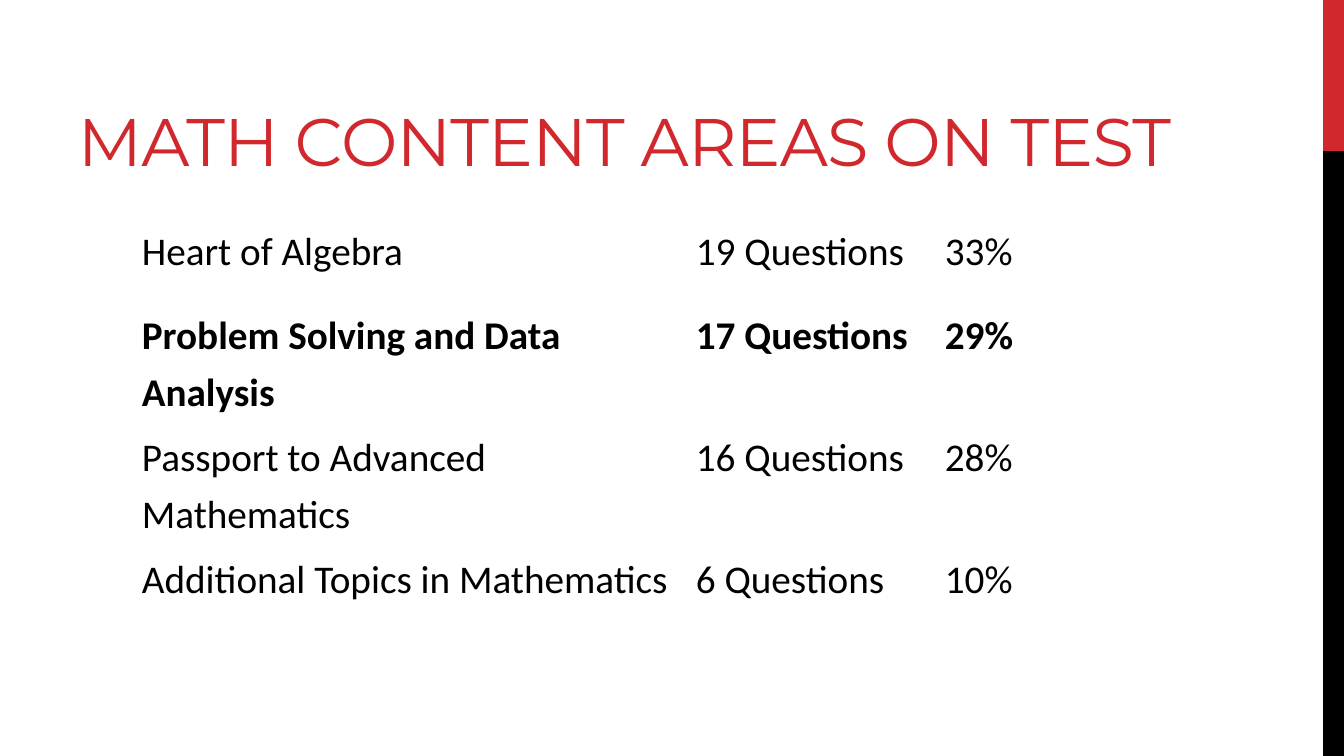
from pptx import Presentation
from pptx.dml.color import RGBColor
from pptx.enum.shapes import MSO_SHAPE as Shape
from pptx.enum.text import MSO_ANCHOR as Anchor
from pptx.util import Emu, Pt

EMU_PER_PX = 914400 / 100.8
RED, BLACK = "D1282E", "000000"
COLUMN_WIDTHS = [554, 249, 162]
ROW_HEIGHTS = [84, 122, 122, 84]
AREAS = [
    ("Heart of Algebra", "19 Questions", "33%"),
    ("Problem Solving and Data Analysis", "17 Questions", "29%"),
    ("Passport to Advanced Mathematics", "16 Questions", "28%"),
    ("Additional Topics in Mathematics", "6 Questions", "10%"),
]
HIGHLIGHTED_ROW = 1


def px(length):
    return Emu(round(length * EMU_PER_PX))


def color(value):
    return RGBColor.from_string(value)


def set_margins(target, left, top, right, bottom):
    target.margin_left, target.margin_top = px(left), px(top)
    target.margin_right, target.margin_bottom = px(right), px(bottom)


def write(frame, text, *, font, size, fill, bold=False,
          line_spacing=None, space_after=None, tracking=None):
    frame.word_wrap = True
    para = frame.paragraphs[0]
    para.line_spacing = line_spacing
    para.space_after = space_after
    span = para.add_run()
    span.text = text
    span.font.name = font
    span.font.size = Pt(size)
    span.font.bold = bold
    span.font.color.rgb = color(fill)
    if tracking is not None:
        span.font._element.set("spc", str(tracking))


def add_bar(page, left, top, width, height, fill):
    bar = page.shapes.add_shape(Shape.RECTANGLE, px(left), px(top), px(width), px(height))
    bar.shadow.inherit = False
    bar.fill.solid()
    bar.fill.fore_color.rgb = color(fill)
    bar.line.fill.background()


def add_title(page, text):
    box = page.shapes.add_textbox(px(68), px(17), px(1214), px(168))
    frame = box.text_frame
    frame.vertical_anchor = Anchor.BOTTOM
    set_margins(frame, 10, 5, 10, 5)
    write(frame, text, font="Montserrat", size=48, fill=RED, tracking=-60)


def add_area_table(page):
    holder = page.shapes.add_table(len(AREAS), len(COLUMN_WIDTHS), px(138), px(215),
                                   px(sum(COLUMN_WIDTHS)), px(sum(ROW_HEIGHTS)))
    table = holder.table
    table.first_row = table.horz_banding = False
    for column, width in zip(table.columns, COLUMN_WIDTHS):
        column.width = px(width)
    for index, (row, height) in enumerate(zip(table.rows, ROW_HEIGHTS)):
        row.height = px(height)
        for cell, text in zip(row.cells, AREAS[index]):
            cell.fill.background()
            set_margins(cell, 4, 4, 4, 4)
            write(cell.text_frame, text, font="Calibri", size=28, fill=BLACK,
                  bold=index == HIGHLIGHTED_ROW, line_spacing=1.19, space_after=Pt(6))


def main():
    deck = Presentation()
    deck.slide_width, deck.slide_height = px(1344), px(756)
    page = deck.slides.add_slide(deck.slide_layouts[6])
    add_bar(page, 1323, 0, 21, 151, RED)
    add_bar(page, 1323, 151, 21, 605, BLACK)
    add_title(page, "MATH CONTENT AREAS ON TEST")
    add_area_table(page)
    deck.save("out.pptx")


if __name__ == "__main__":
    main()
